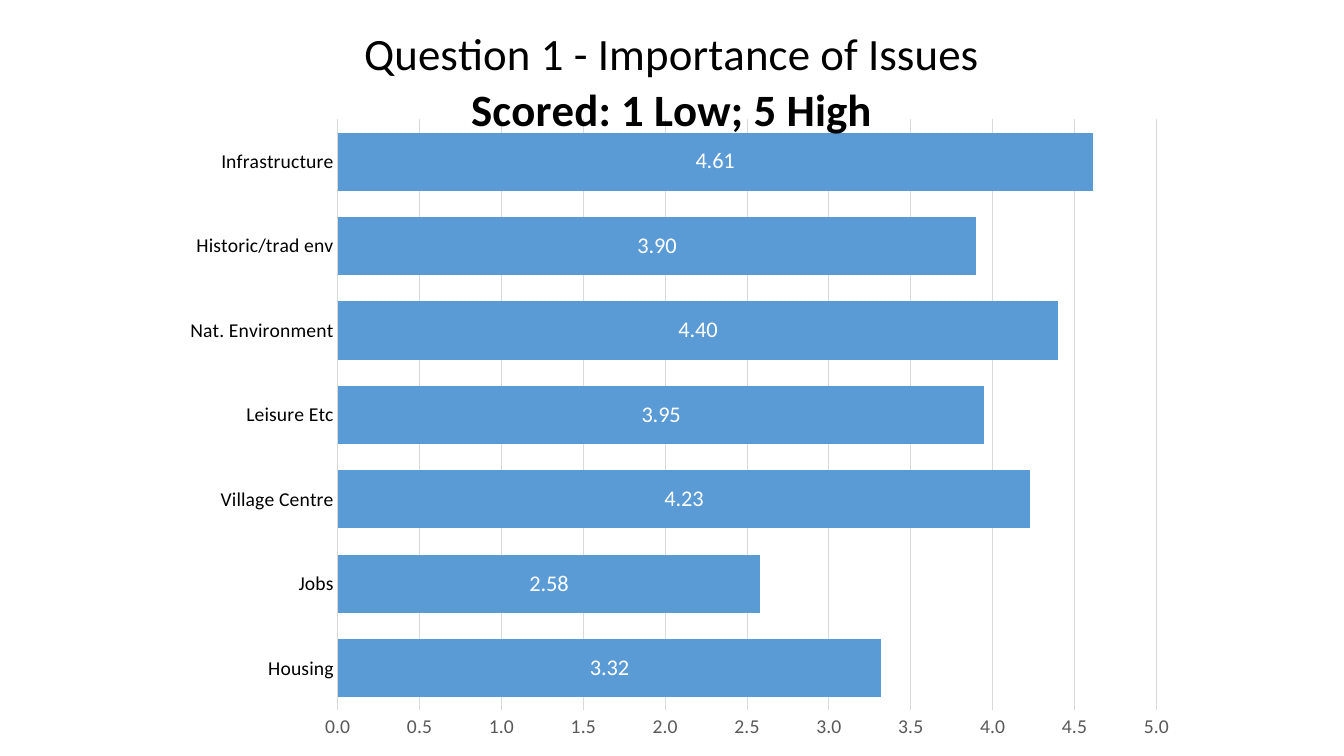
import pptx
import pptx.chart.data
import pptx.dml.color
import pptx.enum.chart
import pptx.oxml
import pptx.oxml.ns
import pptx.util
from pptx.util import Inches

SCORES = {
    "Housing": 3.32,
    "Jobs": 2.58,
    "Village Centre": 4.23,
    "Leisure Etc": 3.95,
    "Nat. Environment": 4.40,
    "Historic/trad env": 3.90,
    "Infrastructure": 4.61,
}


def color(value):
    return pptx.dml.color.RGBColor.from_string(value)


def apply(target, values):
    """Set every attribute named in a dict of format values."""
    for name, value in values.items():
        setattr(target, name, value)


def set_layout(parent, index, **places):
    """Give a chart part a manual layout, in fractions of the chart."""
    for old in parent.findall(pptx.oxml.ns.qn("c:layout")):
        parent.remove(old)
    items = "".join(f'<c:{k} val="{v}"/>' for k, v in places.items())
    parent.insert(index, pptx.oxml.parse_xml(
        f'<c:layout {pptx.oxml.ns.nsdecls("c")}>'
        f"<c:manualLayout>{items}</c:manualLayout></c:layout>"))


class Deck:
    font = "Calibri"
    black, gray, grid, blue, white = (
        "000000", "595959", "D9D9D9", "5B9BD5", "FFFFFF")

    def __init__(self):
        self.prs = pptx.Presentation()
        self.prs.slide_width = Inches(13.33)
        self.prs.slide_height = Inches(7.5)
        self.s = self.prs.slides.add_slide(self.prs.slide_layouts[6])

    def style(self, font, size, hex_color, bold=False):
        apply(font, {"name": self.font, "size": pptx.util.Pt(size), "bold": bold})
        font.color.rgb = color(hex_color)

    def line(self, fmt):
        fmt.line.color.rgb = color(self.grid)
        fmt.line.width = pptx.util.Pt(0.75)

    def bar_chart(self, scores, left, top, width, height):
        data = pptx.chart.data.CategoryChartData()
        data.categories = list(scores)
        data.add_series("Series 1", list(scores.values()))
        chart = self.s.shapes.add_chart(
            pptx.enum.chart.XL_CHART_TYPE.BAR_CLUSTERED,
            Inches(left), Inches(top), Inches(width), Inches(height), data).chart
        chart.has_legend = False
        self.style(chart.font, 10, self.black)
        plot = chart.plots[0]
        apply(plot, {"gap_width": 45, "vary_by_categories": False,
                     "has_data_labels": True})
        fill = plot.series[0].format.fill
        fill.solid()
        fill.fore_color.rgb = color(self.blue)
        apply(plot.data_labels, {
            "show_value": True, "number_format": "0.00",
            "number_format_is_linked": False,
            "position": pptx.enum.chart.XL_LABEL_POSITION.CENTER})
        self.style(plot.data_labels.font, 16, self.white)
        self.axes(chart)
        plot_area = chart.element.find(".//" + pptx.oxml.ns.qn("c:plotArea"))
        set_layout(plot_area, 0, layoutTarget="inner", xMode="edge", yMode="edge",
                   x=0.167, y=0.158, w=0.812, h=0.782)
        return chart

    def axes(self, chart):
        no_tick = pptx.enum.chart.XL_TICK_MARK.NONE
        cat, val = chart.category_axis, chart.value_axis
        for axis, hex_color in ((cat, self.black), (val, self.gray)):
            apply(axis, {"major_tick_mark": no_tick, "minor_tick_mark": no_tick})
            self.style(axis.tick_labels.font, 14, hex_color)
        self.line(cat.format)
        apply(val, {"minimum_scale": 0, "maximum_scale": 5, "major_unit": 0.5,
                    "has_major_gridlines": True})
        apply(val.tick_labels, {"number_format": "0.0",
                                "number_format_is_linked": False})
        self.line(val.major_gridlines.format)
        val.format.line.fill.background()

    def chart_title(self, chart, lines, x, y):
        """Write title lines, the last one bold, at a fraction of the chart."""
        chart.has_title = True
        tf = chart.chart_title.text_frame
        for i, text in enumerate(lines):
            p = tf.add_paragraph() if i else tf.paragraphs[0]
            r = p.add_run()
            r.text = text
            self.style(r.font, 32, self.black, bold=i == len(lines) - 1)
        set_layout(chart.chart_title.element, 1,
                   xMode="edge", yMode="edge", x=x, y=y)


def main():
    deck = Deck()
    chart = deck.bar_chart(SCORES, 1.68, 0, 10, 7.5)
    deck.chart_title(chart, ["Question 1 - Importance of Issues",
                             "Scored: 1 Low; 5 High"], 0.19, 0.03)
    deck.prs.save("out.pptx")


if __name__ == "__main__":
    main()
